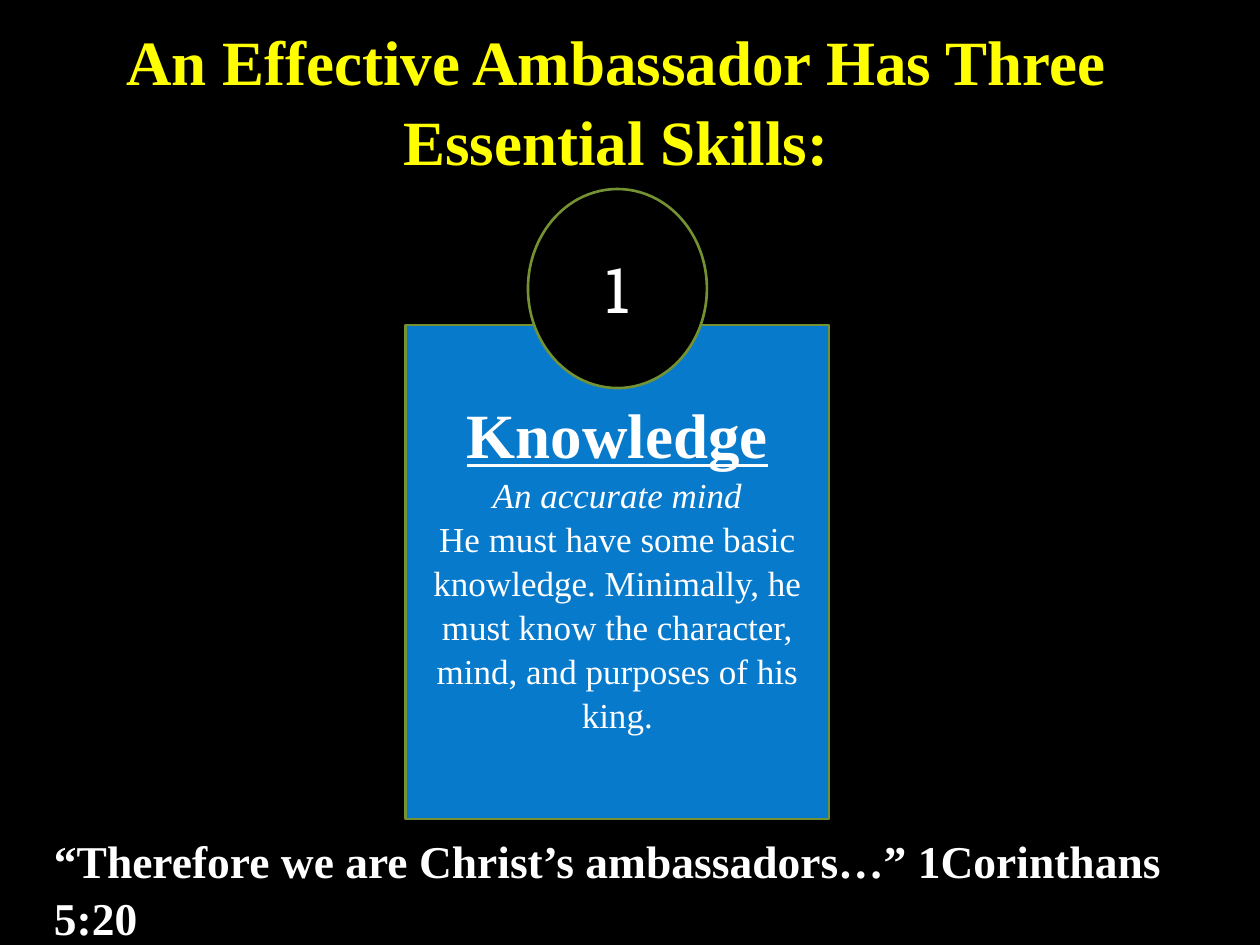
"""Build the slide on the first essential skill of an ambassador."""
from dataclasses import dataclass

from pptx import Presentation
from pptx.dml.color import RGBColor
from pptx.enum import shapes, text
from pptx.util import Inches, Pt

BLACK = RGBColor(0x00, 0x00, 0x00)
WHITE = RGBColor(0xFF, 0xFF, 0xFF)
YELLOW = RGBColor(0xFF, 0xFF, 0x00)
BLUE = RGBColor(0x07, 0x7A, 0xCC)
OLIVE = RGBColor(0x75, 0x92, 0x32)
SERIF = "Times New Roman"
SLAB = "Roboto Slab"


@dataclass(frozen=True)
class Bounds:
    left: float
    top: float
    width: float
    height: float

    def lengths(self) -> tuple:
        return tuple(Inches(v) for v in (self.left, self.top, self.width, self.height))


@dataclass(frozen=True)
class Panel:
    kind: shapes.MSO_SHAPE
    bounds: Bounds
    fill: RGBColor


CARD = Panel(shapes.MSO_SHAPE.RECTANGLE, Bounds(3.22, 2.58, 3.36, 3.92), BLUE)
BADGE = Panel(shapes.MSO_SHAPE.OVAL, Bounds(4.19, 1.5, 1.42, 1.58), BLACK)


def prepare_frame(frame, anchor=text.MSO_ANCHOR.TOP, top: float = 0.05) -> None:
    frame.word_wrap = True
    frame.auto_size = text.MSO_AUTO_SIZE.NONE
    frame.vertical_anchor = anchor
    frame.margin_left = frame.margin_right = Inches(0.1)
    frame.margin_top, frame.margin_bottom = Inches(top), Inches(0.05)


def write(frame, words: str, *, size: float, font: str = SERIF, color: RGBColor = WHITE,
          bold: bool = False, italic: bool = False, underline: bool = False,
          align=text.PP_ALIGN.CENTER, spacing: float = 1.05) -> None:
    para = frame.paragraphs[-1]
    if para.runs:
        para = frame.add_paragraph()
    para.alignment = align
    para.line_spacing = spacing
    para.space_before = para.space_after = Pt(0)
    span = para.add_run()
    span.text = words
    span.font.name, span.font.size = font, Pt(size)
    span.font.bold, span.font.italic, span.font.underline = bold, italic, underline
    span.font.color.rgb = color


def add_panel(page, panel: Panel):
    box = page.shapes.add_shape(panel.kind, *panel.bounds.lengths())
    box.shadow.inherit = False
    box.fill.solid()
    box.fill.fore_color.rgb = panel.fill
    box.line.color.rgb = OLIVE
    box.line.width = Pt(1.5)
    return box.text_frame


def main() -> None:
    deck = Presentation()
    deck.slide_width, deck.slide_height = Inches(10), Inches(7.5)
    page = deck.slides.add_slide(deck.slide_layouts[5])
    page.background.fill.solid()
    page.background.fill.fore_color.rgb = BLACK

    title = page.shapes.title
    title.left, title.top, title.width, title.height = Bounds(0.45, 0.1, 8.88, 1.31).lengths()
    prepare_frame(title.text_frame)
    write(title.text_frame, "An Effective Ambassador Has Three Essential Skills:",
          size=36, color=YELLOW, bold=True)

    card = add_panel(page, CARD)
    prepare_frame(card, top=0.53)
    write(card, "Knowledge", size=36, bold=True, underline=True)
    write(card, "An accurate mind", size=20, italic=True)
    write(card, "He must have some basic knowledge. Minimally, he must know the "
          "character, mind, and purposes of his king.", size=20)

    badge = add_panel(page, BADGE)
    prepare_frame(badge, anchor=text.MSO_ANCHOR.MIDDLE)
    write(badge, "1", size=36, font=SLAB, spacing=1.0)

    quote = page.shapes.add_textbox(*Bounds(0.33, 6.54, 9.33, 0.54).lengths()).text_frame
    prepare_frame(quote)
    write(quote, "“Therefore we are Christ’s ambassadors…” 1Corinthans 5:20",
          size=26, bold=True, align=text.PP_ALIGN.LEFT)

    deck.save("out.pptx")


if __name__ == "__main__":
    main()
